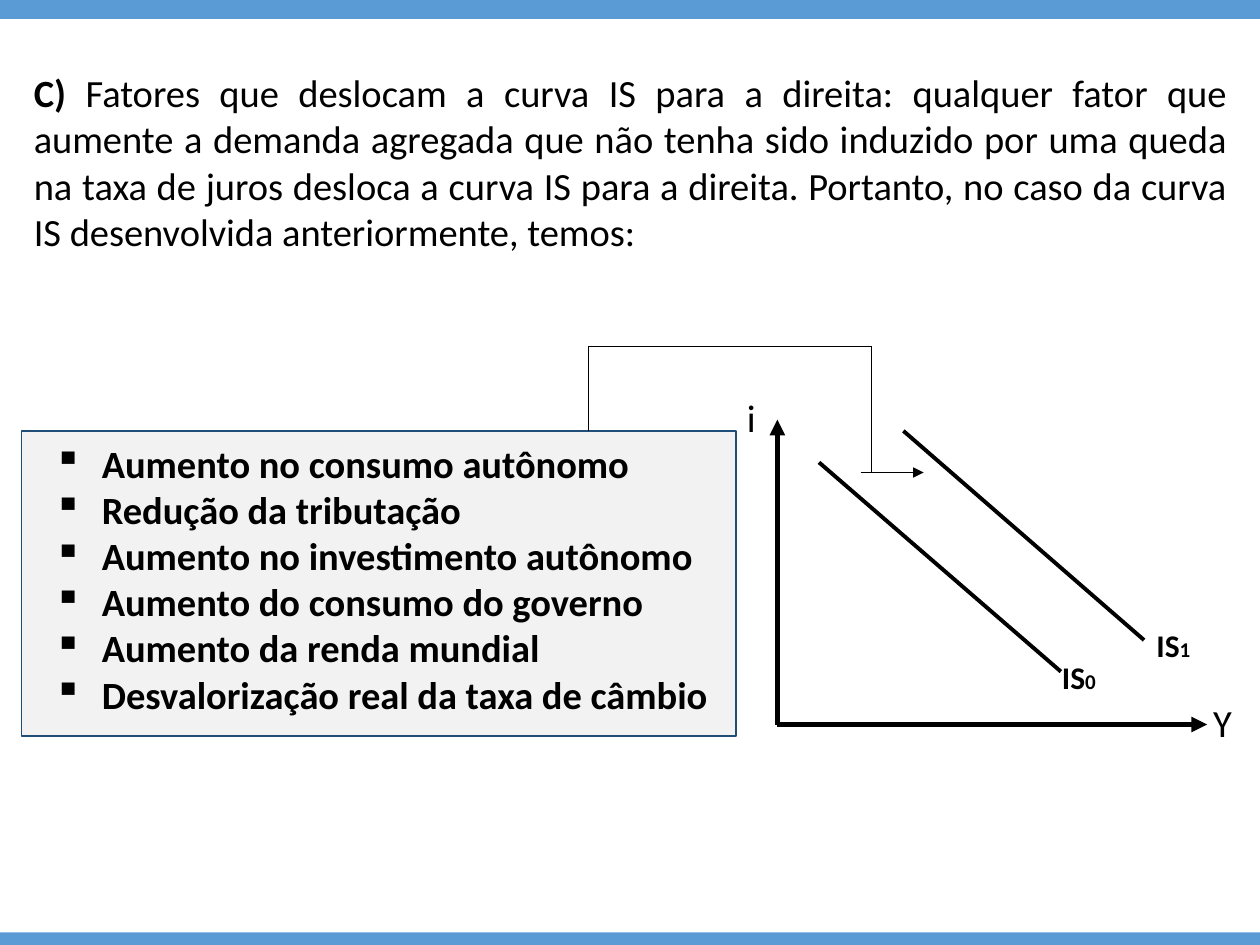
from dataclasses import dataclass

from lxml import etree
from pptx import Presentation
from pptx.dml.color import RGBColor
from pptx.enum.shapes import MSO_CONNECTOR, MSO_SHAPE
from pptx.enum.text import MSO_AUTO_SIZE, PP_ALIGN
from pptx.oxml.ns import qn
from pptx.util import Inches, Pt

RECTANGLE = MSO_SHAPE.RECTANGLE
STRAIGHT = MSO_CONNECTOR.STRAIGHT
GROW = MSO_AUTO_SIZE.SHAPE_TO_FIT_TEXT
JUSTIFY = PP_ALIGN.JUSTIFY

BLUE = RGBColor(0x5B, 0x9B, 0xD5)
NAVY = RGBColor(0x1F, 0x4E, 0x79)
PALE_GRAY = RGBColor(0xF2, 0xF2, 0xF2)
BLACK = RGBColor(0, 0, 0)
FONT = "Calibri"
BODY_SIZE = 22


@dataclass
class Span:
    text: str
    size: float = BODY_SIZE
    bold: bool = False


@dataclass
class Segment:
    start: tuple[float, float]
    end: tuple[float, float]
    width: float
    arrow: bool = False


def add_panel(page, left: float, top: float, width: float, height: float,
              fill: RGBColor, line: RGBColor | None = None) -> None:
    panel = page.shapes.add_shape(RECTANGLE, Inches(left), Inches(top),
                                  Inches(width), Inches(height))
    panel.shadow.inherit = False
    panel.fill.solid()
    panel.fill.fore_color.rgb = fill
    if line is None:
        panel.line.fill.background()
    else:
        panel.line.color.rgb = line
        panel.line.width = Pt(1)


def add_segment(page, segment: Segment) -> None:
    points = [Inches(value) for value in (*segment.start, *segment.end)]
    connector = page.shapes.add_connector(STRAIGHT, *points)
    connector.line.color.rgb = BLACK
    connector.line.width = Pt(segment.width)
    if segment.arrow:
        etree.SubElement(connector.line._get_or_add_ln(), qn("a:tailEnd"), type="triangle")
    etree.SubElement(connector._element.spPr, qn("a:effectLst"))


def add_bullet(para, indent: float) -> None:
    properties = para._p.get_or_add_pPr()
    properties.set("marL", str(Inches(indent)))
    properties.set("indent", str(-Inches(indent)))
    etree.SubElement(properties, qn("a:buChar"), char="▪")


def add_text(page, left: float, top: float, width: float, height: float,
             paragraphs: list[list[Span]], *, align: PP_ALIGN | None = None,
             bullet_indent: float = 0) -> None:
    box = page.shapes.add_textbox(Inches(left), Inches(top), Inches(width), Inches(height))
    frame = box.text_frame
    frame.word_wrap = True
    frame.auto_size = GROW
    for index, spans in enumerate(paragraphs):
        para = frame.add_paragraph() if index else frame.paragraphs[0]
        para.alignment = align
        if bullet_indent:
            add_bullet(para, bullet_indent)
        for span in spans:
            run = para.add_run()
            run.text = span.text
            run.font.name = FONT
            run.font.size = Pt(span.size)
            run.font.bold = span.bold
            run.font.color.rgb = BLACK


INTRO = [
    Span("C) ", bold=True),
    Span("Fatores que deslocam a curva IS para a direita: qualquer fator que aumente "
         "a demanda agregada que não tenha sido induzido por uma queda na taxa de juros "
         "desloca a curva IS para a direita. Portanto, no caso da curva IS desenvolvida "
         "anteriormente, temos:"),
]
FACTORS = [
    "Aumento no consumo autônomo",
    "Redução da tributação",
    "Aumento no investimento autônomo",
    "Aumento do consumo do governo",
    "Aumento da renda mundial",
    "Desvalorização real da taxa de câmbio",
]

ORIGIN = (6.17, 5.75)
AXES = [
    Segment(ORIGIN, (6.17, 3.33), 3, arrow=True),
    Segment(ORIGIN, (9.58, 5.75), 3, arrow=True),
]
AXIS_LABELS = [("i", 5.83, 3.08), ("Y", 9.53, 5.5)]
CURVES = [
    Segment((6.5, 3.67), (8.42, 5.33), 2.25),
    Segment((7.17, 3.42), (9.08, 5.08), 2.25),
]
CURVE_LABELS = [("0", 8.33, 5.17), ("1", 9.08, 4.92)]
SHIFT_ARROW = Segment((6.83, 3.75), (7.33, 3.75), 0.5, arrow=True)
# Corners of the path from the factor panel to the shift arrow
LINK = [(4.67, 3.42), (4.67, 2.75), (6.92, 2.75), (6.92, 3.75)]


def main() -> None:
    deck = Presentation()
    deck.slide_width, deck.slide_height = Inches(10), Inches(7.5)
    page = deck.slides.add_slide(deck.slide_layouts[6])

    # Bands at the page edges
    add_panel(page, 0, 0, 10, 0.15, BLUE)
    add_panel(page, 0, 7.4, 10, 0.11, BLUE)

    # Introduction and factor list
    add_panel(page, 0.17, 3.42, 5.67, 2.42, PALE_GRAY, NAVY)
    add_text(page, 0.17, 0.5, 9.67, 1.58, [INTRO], align=JUSTIFY)
    add_text(page, 0.33, 3.44, 9.08, 3.06,
             [[Span(factor, bold=True)] for factor in FACTORS], bullet_indent=0.38)

    # Diagram of the IS curve shifting right
    link = [Segment(start, end, 0.5) for start, end in zip(LINK, LINK[1:])]
    for segment in [*AXES, *CURVES, SHIFT_ARROW, *link]:
        add_segment(page, segment)
    for name, left, top in AXIS_LABELS:
        add_text(page, left, top, 0.25, 0.47, [[Span(name)]])
    for number, left, top in CURVE_LABELS:
        add_text(page, left, top, 0.75, 0.5,
                 [[Span("IS", 18, True), Span(number, 12, True), Span(" ", 18, True)]])

    deck.save("out.pptx")


if __name__ == "__main__":
    main()
